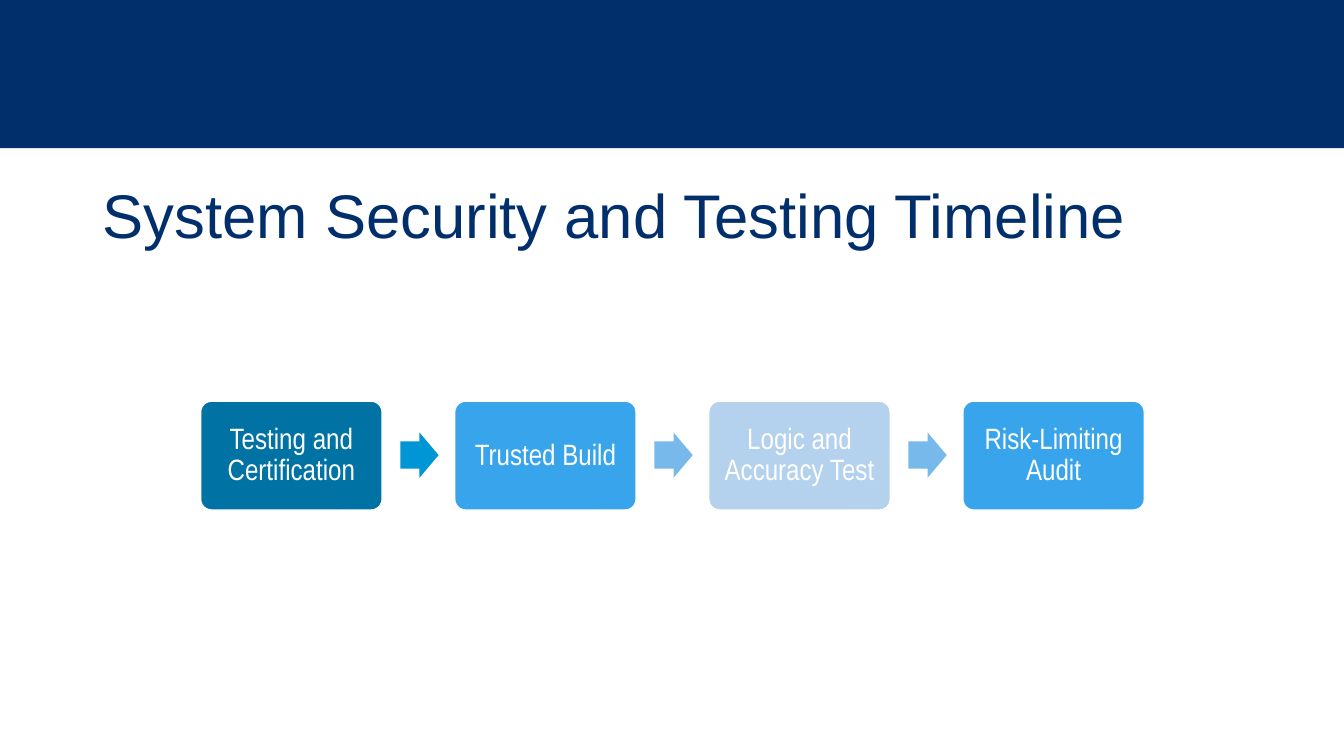
from pptx import Presentation, util as u
from pptx.dml.color import RGBColor
from pptx.enum import shapes, text

PX = 9144
COLORS = {
    "navy": "002F6C",
    "white": "FFFFFF",
    "teal": "0073A4",
    "cyan": "0095D4",
    "blue": "38A4EB",
    "sky": "78B9EB",
    "pale": "B4D1EE",
}
STEPS = [
    ("Testing and Certification", "teal", "cyan"),
    ("Trusted Build", "blue", "sky"),
    ("Logic and Accuracy Test", "pale", "sky"),
    ("Risk-Limiting Audit", "blue", None),
]
STEP_LEFT, STEP_TOP, STEP_W, STEP_H = 199, 398, 180, 108
PITCH = 252
ARROW_OFFSET, ARROW_W, ARROW_H = 198, 38, 45


def rgb(name):
    return RGBColor.from_string(COLORS[name])


def px(*lengths):
    return [u.Emu(n * PX) for n in lengths]


def add_block(s, kind, box, fill, adjustments=()):
    sp = s.shapes.add_shape(kind, *px(*box))
    sp.shadow.inherit = False
    sp.fill.solid()
    sp.fill.fore_color.rgb = rgb(fill)
    sp.line.fill.background()
    for i, value in enumerate(adjustments):
        sp.adjustments[i] = value
    return sp


def format_paragraph(p, font, size, color, align):
    p.alignment = align
    p.line_spacing = 0.9
    p.font.name = font
    p.font.size = u.Pt(size)
    p.font.color.rgb = rgb(color)


def set_title(s, wording):
    sp = s.shapes.title
    sp.left, sp.top, sp.width, sp.height = px(92, 167, 1150, 100)
    tf = sp.text_frame
    tf.text = wording
    tf.vertical_anchor = text.MSO_ANCHOR.MIDDLE
    format_paragraph(tf.paragraphs[0], "Arial", 44, "navy", text.PP_ALIGN.LEFT)


def add_step(s, left, label, fill):
    box = (left, STEP_TOP, STEP_W, STEP_H)
    sp = add_block(s, shapes.MSO_SHAPE.ROUNDED_RECTANGLE, box, fill, [0.1])
    sp.line.color.rgb = rgb("white")
    sp.line.width = u.Pt(1)
    tf = sp.text_frame
    tf.word_wrap = True
    tf.vertical_anchor = text.MSO_ANCHOR.MIDDLE
    tf.margin_left, tf.margin_top, tf.margin_right, tf.margin_bottom = px(9, 9, 9, 9)
    tf.text = label
    format_paragraph(tf.paragraphs[0], "Arial Narrow", 21, "white", text.PP_ALIGN.CENTER)


def add_arrow(s, left, fill):
    box = (left, 429, ARROW_W, ARROW_H)
    add_block(s, shapes.MSO_SHAPE.RIGHT_ARROW, box, fill, [0.6, 0.5])


def main():
    prs = Presentation()
    prs.slide_width, prs.slide_height = u.Inches(13.33), u.Inches(7.5)
    s = prs.slides.add_slide(prs.slide_layouts[5])
    add_block(s, shapes.MSO_SHAPE.RECTANGLE, (0, 0, 1333, 147), "navy")
    set_title(s, "System Security and Testing Timeline")
    for i, (label, fill, arrow) in enumerate(STEPS):
        left = STEP_LEFT + i * PITCH
        add_step(s, left, label, fill)
        if arrow:
            add_arrow(s, left + ARROW_OFFSET, arrow)
    prs.save("out.pptx")


if __name__ == "__main__":
    main()
